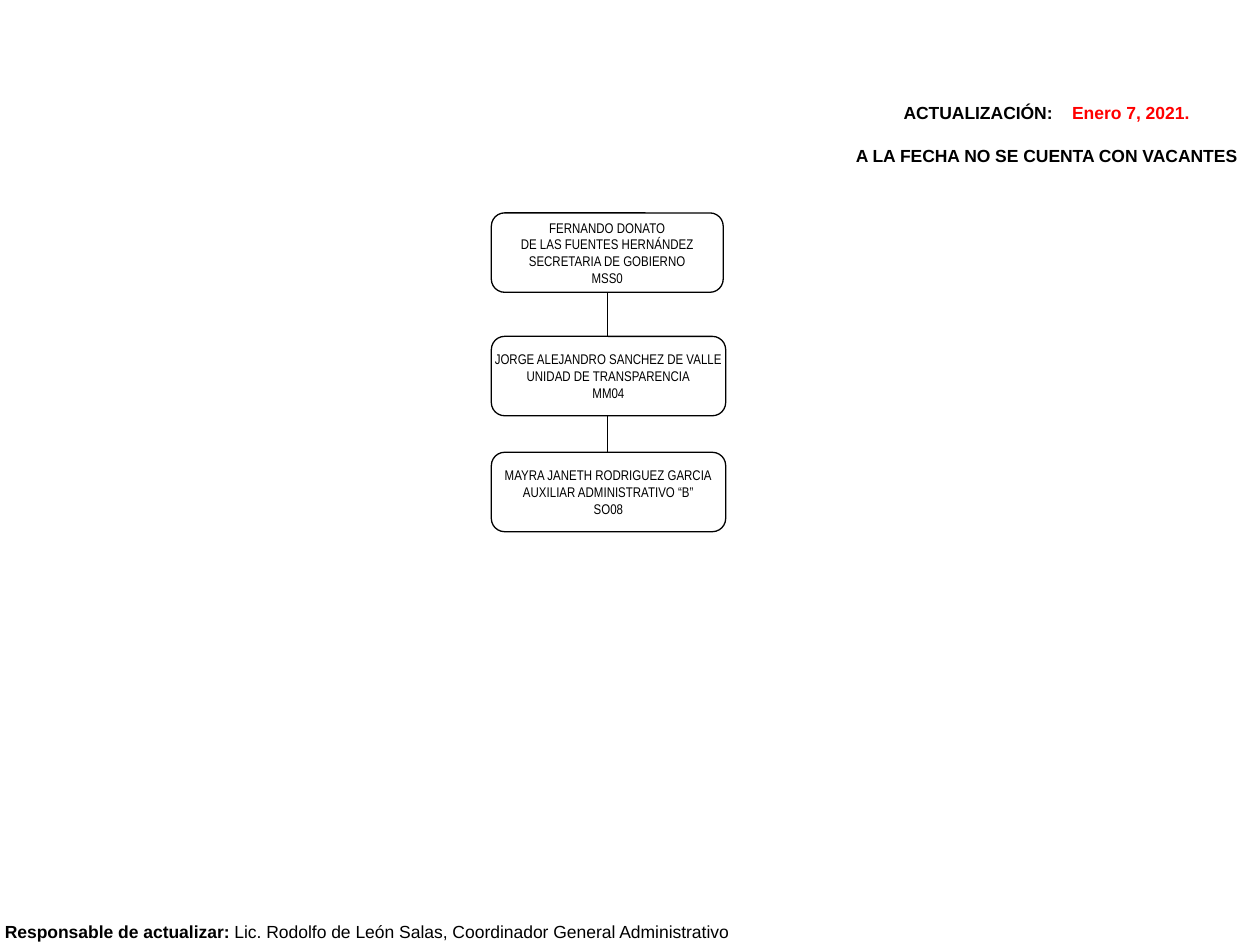
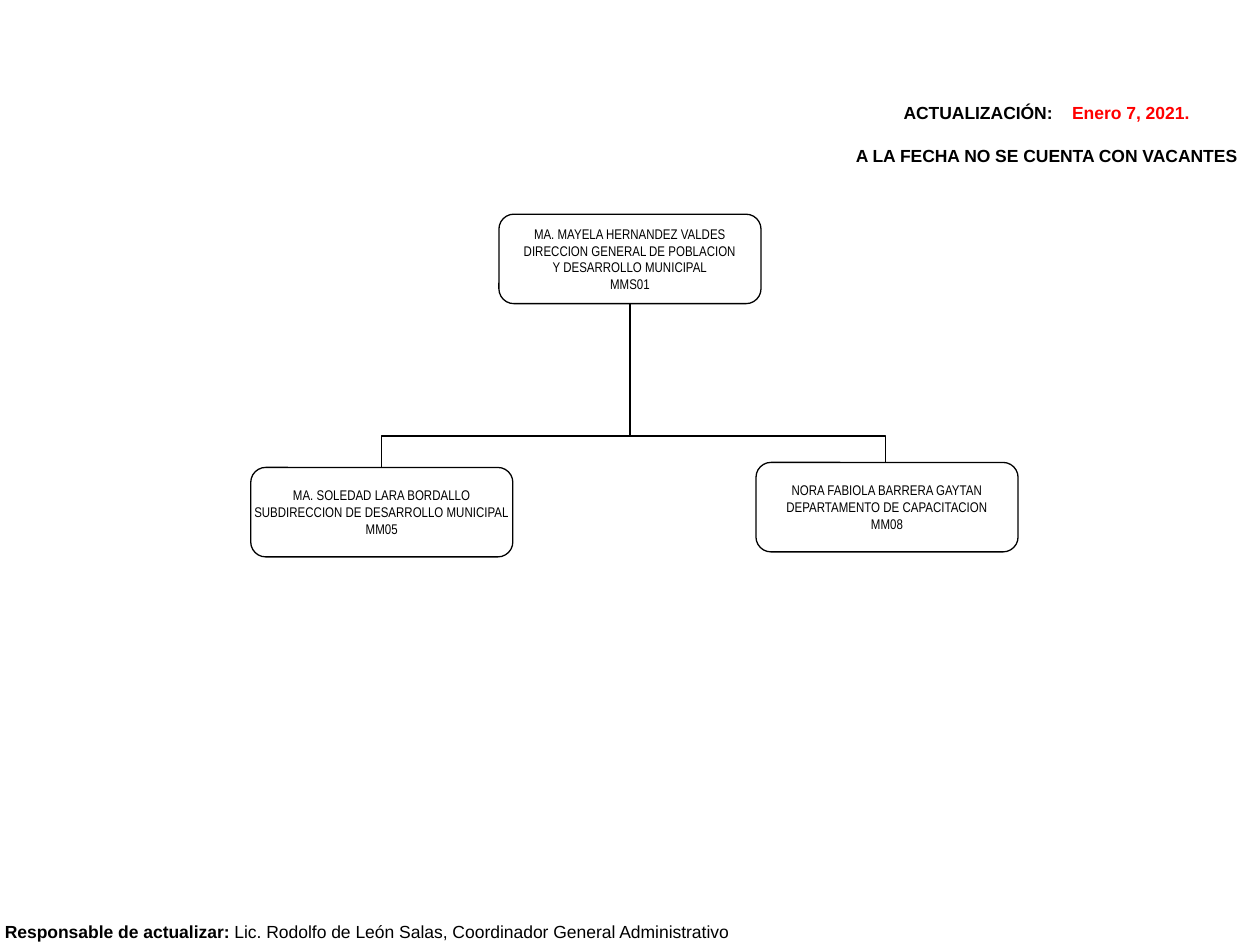
from pptx import Presentation
from pptx.util import Pt
from pptx.dml.color import RGBColor
from pptx.enum.shapes import MSO_SHAPE as Shape, MSO_CONNECTOR as Link
from pptx.enum.text import PP_ALIGN as Align, MSO_ANCHOR as Anchor
from lxml import etree

BLACK = RGBColor(0, 0, 0)
WHITE = RGBColor(255, 255, 255)
RED = RGBColor(255, 0, 0)
NOTE = {"name": "Arial", "size": Pt(10)}
CARD = {"name": "Arial Narrow", "size": Pt(8), "bold": False}
NS = "{http://schemas.openxmlformats.org/drawingml/2006/main}"

# Each note: left, top, width, height and its paragraphs of (text, bold, colour)
NOTES = [
    (-14.4, 522.72, 447.84, 19.44, [
        [("Responsable de actualizar: ", True, BLACK),
         ("Lic. Rodolfo de León Salas, Coordinador General Administrativo",
          False, BLACK)]]),
    (474.48, 54.72, 246.96, 43.92, [
        [("ACTUALIZACIÓN:", True, BLACK), (" ", True, BLACK),
         ("Enero 7, 2021.", True, RED)],
        [("A LA FECHA NO SE CUENTA CON VACANTES", True, BLACK)]]),
]

# Each chart: card height, straight lines, elbows (with bend), cards
ROUND, ALT = Shape.ROUNDED_RECTANGLE, Shape.FLOWCHART_ALTERNATE_PROCESS
CHARTS = [
    (45.36, [(347.04, 167, 347.04, 294.5)], [], [
        (ROUND, 280.8, 121.68, 132.48,
         "FERNANDO DONATO\nDE LAS FUENTES HERNÁNDEZ\n"
         "SECRETARIA DE GOBIERNO\nMSS0"),
        (ROUND, 280.8, 192.24, 133.92,
         "JORGE ALEJANDRO SANCHEZ DE VALLE\nUNIDAD DE TRANSPARENCIA\nMM04"),
        (ALT, 280.8, 258.48, 133.92,
         "MAYRA JANETH RODRIGUEZ GARCIA\nAUXILIAR ADMINISTRATIVO “B”\nSO08"),
    ]),
    (51.12, [(360, 170, 360, 249.12)],
     [(363.6, 412.56, 360.78, 124.56, 740200)], [
        (ROUND, 285.12, 122.4, 149.76,
         "MA. MAYELA HERNANDEZ VALDES\nDIRECCION GENERAL DE POBLACION\n"
         "Y DESARROLLO MUNICIPAL\nMMS01"),
        (ROUND, 143.28, 267.12, 149.76,
         "MA. SOLEDAD LARA BORDALLO\n"
         "SUBDIRECCION DE DESARROLLO MUNICIPAL\nMM05"),
        (ROUND, 432, 264.24, 149.76,
         "NORA FABIOLA BARRERA GAYTAN\nDEPARTAMENTO DE CAPACITACION\nMM08"),
    ]),
]


def style(font, form, color):
    for key, val in form.items():
        setattr(font, key, val)
    font.color.rgb = color


def join(slide, kind, ends):
    """Draw a thin black connector without shadow."""
    line = slide.shapes.add_connector(kind, *map(Pt, ends))
    line.line.color.rgb = BLACK
    line.line.width = Pt(0.75)
    etree.SubElement(line._element.spPr, NS + "effectLst")
    return line


deck = Presentation()
deck.slide_width, deck.slide_height = Pt(720), Pt(540)

for high, lines, elbows, cards in CHARTS:
    slide = deck.slides.add_slide(deck.slide_layouts[6])

    for *place, paras in NOTES:
        frame = slide.shapes.add_textbox(*map(Pt, place)).text_frame
        frame.word_wrap = True
        for i, runs in enumerate(paras):
            para = frame.add_paragraph() if i else frame.paragraphs[0]
            para.alignment = Align.CENTER
            if i:
                para.space_before = Pt(12.5)
            for text, bold, color in runs:
                run = para.add_run()
                run.text = text
                style(run.font, NOTE | {"bold": bold}, color)
                if text == " ":  # widen the gap before the date
                    run._r.get_or_add_rPr().set("spc", "834")

    for ends in elbows:
        elbow = join(slide, Link.ELBOW, ends[:4])
        props = elbow._element.spPr
        props.find(NS + "xfrm").set("rot", str(90 * 60000))
        bends = props.find(f"{NS}prstGeom/{NS}avLst")
        etree.SubElement(bends, NS + "gd", name="adj1", fmla=f"val {ends[4]}")
    for ends in lines:
        join(slide, Link.STRAIGHT, ends)

    for kind, left, top, wide, text in cards:
        card = slide.shapes.add_shape(kind, Pt(left), Pt(top), Pt(wide), Pt(high))
        card.shadow.inherit = False
        card.fill.solid()
        card.fill.fore_color.rgb = WHITE
        card.line.color.rgb = BLACK
        card.line.width = Pt(0.75)
        frame = card.text_frame
        frame.word_wrap = False
        frame.vertical_anchor = Anchor.MIDDLE
        frame.text = text
        for para in frame.paragraphs:
            para.alignment = Align.CENTER
            for run in para.runs:
                style(run.font, CARD, BLACK)

deck.save("out.pptx")
